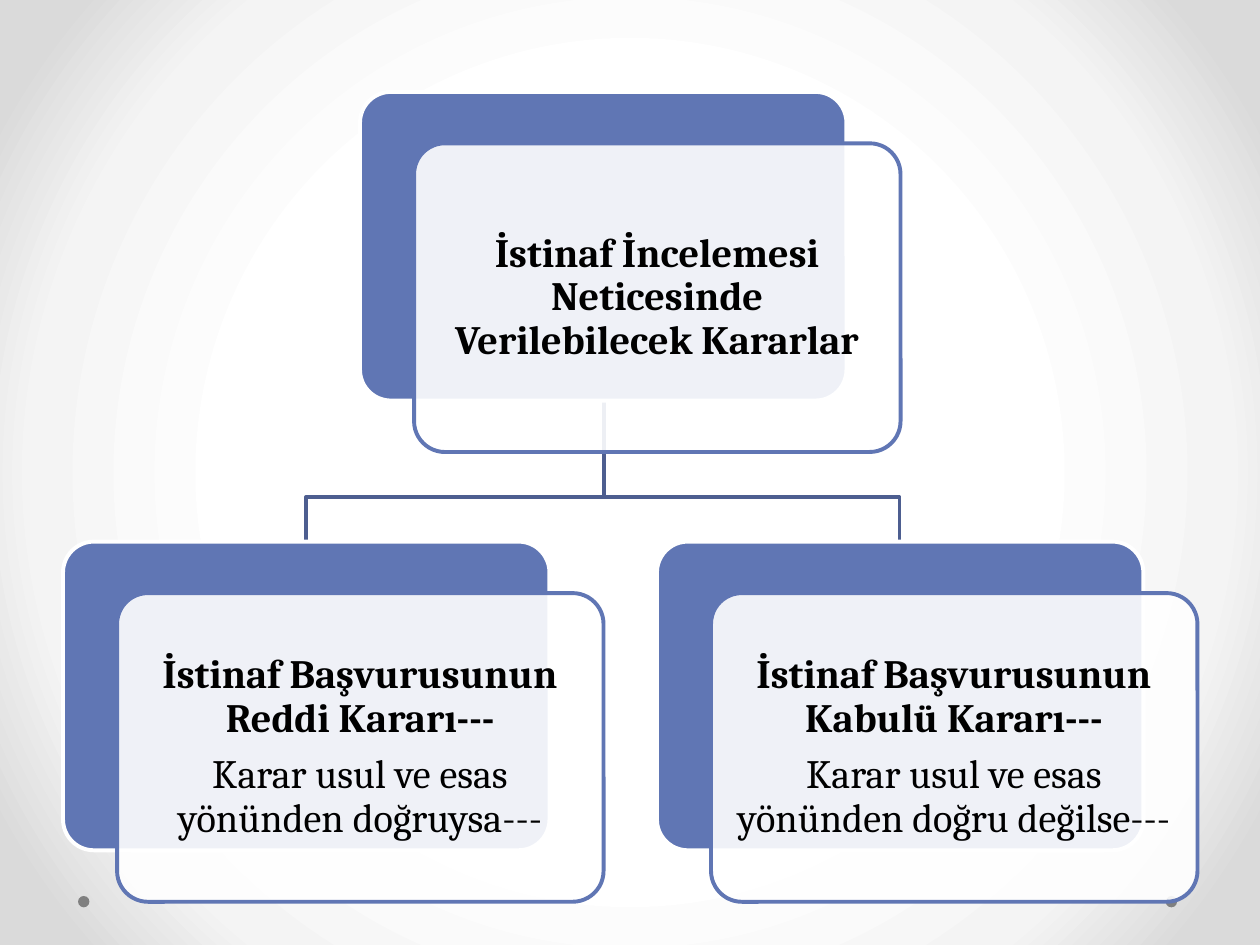
from dataclasses import dataclass

from lxml import etree
from pptx import Presentation
from pptx.dml.color import RGBColor
from pptx.enum import shapes, text
from pptx.oxml import ns
from pptx.util import Pt


@dataclass(frozen=True)
class Theme:
    white: str = "FFFFFF"
    black: str = "000000"
    accent: str = "6076B4"
    branch: str = "4D5E90"
    dot: str = "808080"
    backdrop: tuple = ((50, "FFFFFF"), (76, "F4F4F4"), (92, "DADADA"))
    font: str = "Cambria"
    size: float = 23
    line: float = 2.25
    paragraph_gap: float = 7.5


@dataclass(frozen=True)
class Box:
    left: float
    top: float
    width: float
    height: float

    @property
    def center(self):
        return self.left + self.width / 2

    @property
    def bottom(self):
        return self.top + self.height

    def shifted(self, dx, dy):
        return Box(self.left + dx, self.top + dy, self.width, self.height)

    def lengths(self):
        return [Pt(v) for v in (self.left, self.top, self.width, self.height)]


THEME = Theme()
SLIDE_WIDTH, SLIDE_HEIGHT = 720, 540
CARD_WIDTH, CARD_HEIGHT = 278, 176.4
FRONT_SHIFT = (30.9, 29.4)
CHILD_STEP = 339.4
ROOT_TOP, CHILD_TOP = 52.5, 309.5
CHART_LEFT = 36


def color(value):
    return RGBColor.from_string(value)


def paint_background(slide):
    """Radial gradient from the centre of the slide."""
    slide.background.fill.gradient()
    gradient = next(slide.element.iter(ns.qn("a:gradFill")))
    for child in list(gradient):
        gradient.remove(child)
    stops = etree.SubElement(gradient, ns.qn("a:gsLst"))
    for position, value in THEME.backdrop:
        stop = etree.SubElement(stops, ns.qn("a:gs"), pos=str(position * 1000))
        etree.SubElement(stop, ns.qn("a:srgbClr"), val=value)
    radial = etree.SubElement(gradient, ns.qn("a:path"), {"path": "circle"})
    etree.SubElement(radial, ns.qn("a:fillToRect"),
                     {side: "50000" for side in "ltrb"})


def add_preset(slide, kind, box, fill, line=None):
    shape = slide.shapes.add_shape(kind, *box.lengths())
    shape.shadow.inherit = False
    shape.fill.solid()
    shape.fill.fore_color.rgb = color(fill)
    if line:
        shape.line.color.rgb = color(line)
        shape.line.width = Pt(THEME.line)
    else:
        shape.line.fill.background()
    return shape


def add_dots(slide, box):
    """Small dots at both ends of the footer strip."""
    for left in (box.left, box.left + box.width - box.height):
        add_preset(slide, shapes.MSO_SHAPE.OVAL,
                   Box(left, box.top, box.height, box.height), THEME.dot)


def add_branch(slide, parent, child):
    """Elbow line from the bottom of one card to the top of another."""
    bend = child.top - 25.2
    builder = slide.shapes.build_freeform(parent.center, parent.bottom, scale=Pt(1))
    builder.add_line_segments(
        [(parent.center, bend), (child.center, bend), (child.center, child.top)],
        close=False)
    shape = builder.convert_to_shape()
    shape.shadow.inherit = False
    shape.fill.background()
    shape.line.color.rgb = color(THEME.branch)
    shape.line.width = Pt(THEME.line)


def add_card(slide, box, lines):
    """Solid back plate with a translucent text card in front."""
    rounded = shapes.MSO_SHAPE.ROUNDED_RECTANGLE
    back = add_preset(slide, rounded, box, THEME.accent, THEME.white)
    front = add_preset(slide, rounded, box.shifted(*FRONT_SHIFT),
                       THEME.white, THEME.accent)
    for shape in (back, front):
        shape.adjustments[0] = 0.1
    front_color = front.element.spPr.find(
        ns.qn("a:solidFill")).find(ns.qn("a:srgbClr"))
    etree.SubElement(front_color, ns.qn("a:alpha"), val="90000")

    frame = front.text_frame
    frame.word_wrap = True
    frame.vertical_anchor = text.MSO_ANCHOR.MIDDLE
    frame.margin_left = frame.margin_right = Pt(7.2)
    frame.margin_top = frame.margin_bottom = Pt(7.2)
    for index, wording in enumerate(lines):
        paragraph = frame.add_paragraph() if index else frame.paragraphs[0]
        paragraph.alignment = text.PP_ALIGN.CENTER
        paragraph.line_spacing = 0.9
        paragraph.space_after = Pt(THEME.paragraph_gap)
        run = paragraph.add_run()
        run.text = wording
        run.font.name = THEME.font
        run.font.size = Pt(THEME.size)
        run.font.bold = index == 0
        run.font.color.rgb = color(THEME.black)


def add_hierarchy(slide, left, root_lines, children):
    """Root card centred above a row of child cards."""
    root = Box(left + CHILD_STEP * (len(children) - 1) / 2, ROOT_TOP,
               CARD_WIDTH, CARD_HEIGHT)
    boxes = [Box(left + i * CHILD_STEP, CHILD_TOP, CARD_WIDTH, CARD_HEIGHT)
             for i in range(len(children))]
    for box in reversed(boxes):
        add_branch(slide, root, box)
    add_card(slide, root, root_lines)
    for box, lines in zip(boxes, children):
        add_card(slide, box, lines)


def main():
    presentation = Presentation()
    presentation.slide_width = Pt(SLIDE_WIDTH)
    presentation.slide_height = Pt(SLIDE_HEIGHT)
    slide = presentation.slides.add_slide(presentation.slide_layouts[6])

    paint_background(slide)
    add_dots(slide, Box(44.6, 512, 628, 6.5))
    add_hierarchy(
        slide, CHART_LEFT,
        ["İstinaf İncelemesi Neticesinde Verilebilecek Kararlar"],
        [
            ["İstinaf Başvurusunun Reddi Kararı---",
             "Karar usul ve esas yönünden doğruysa---"],
            ["İstinaf Başvurusunun Kabulü Kararı---",
             "Karar usul ve esas yönünden doğru değilse---"],
        ])
    presentation.save("out.pptx")


if __name__ == "__main__":
    main()
